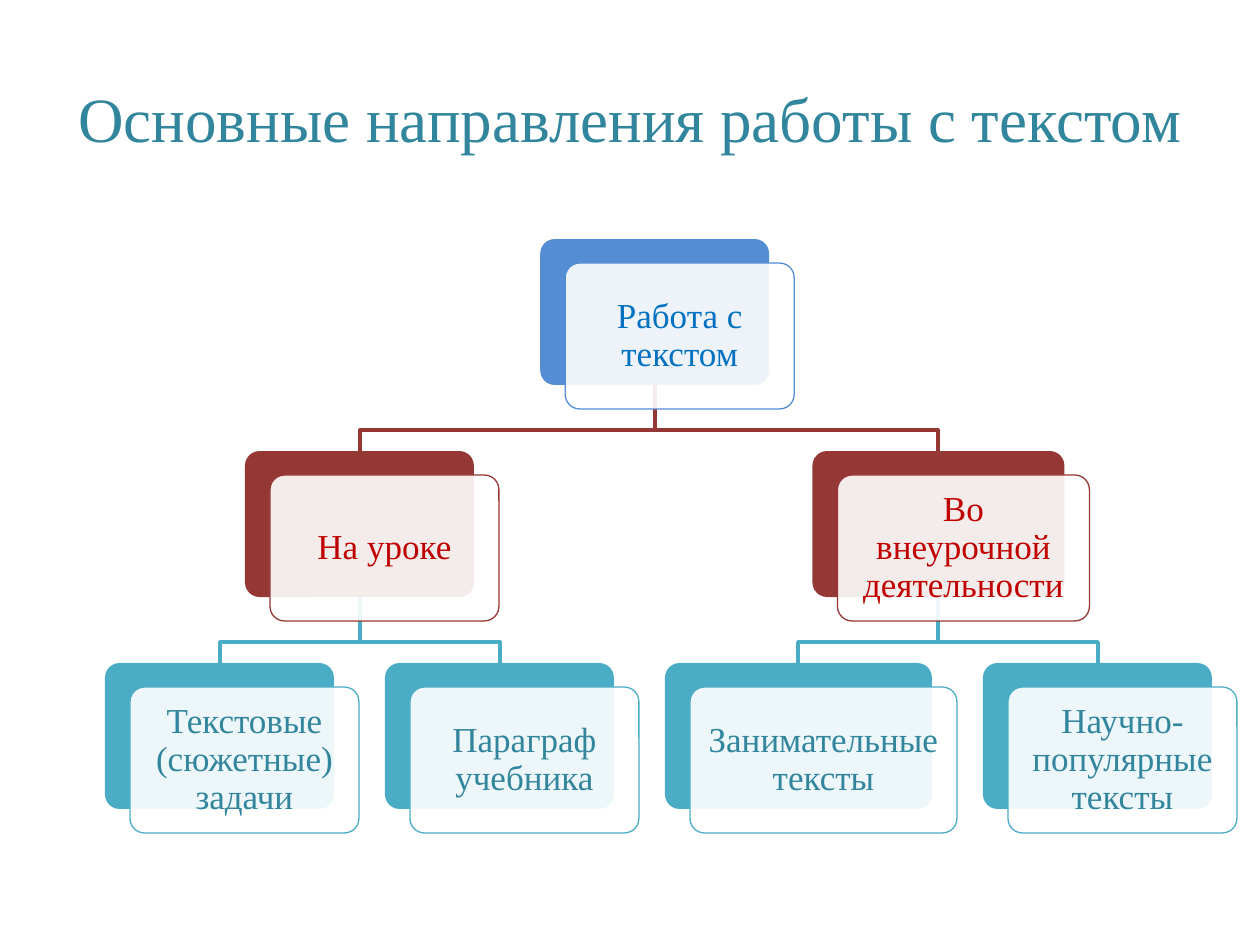
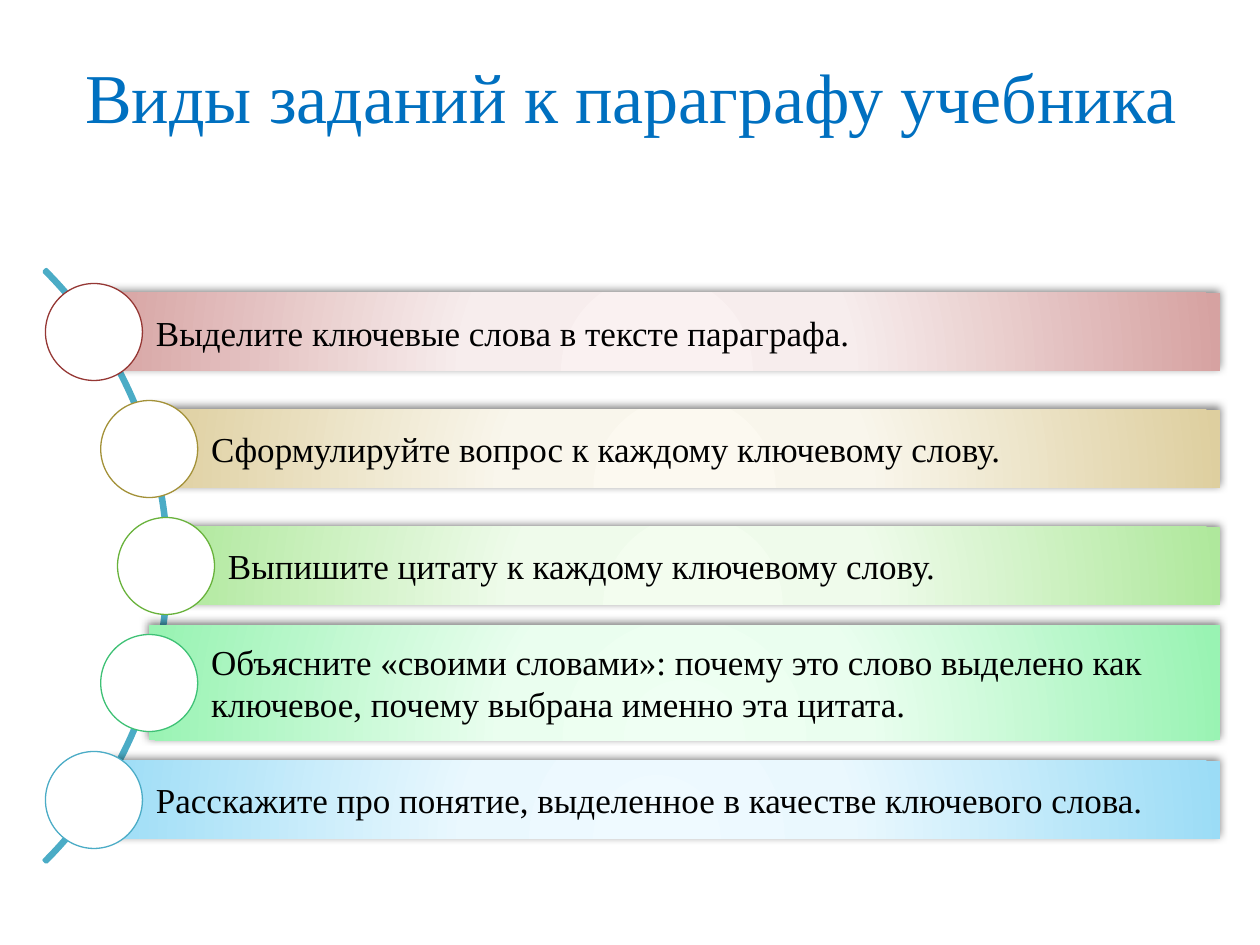
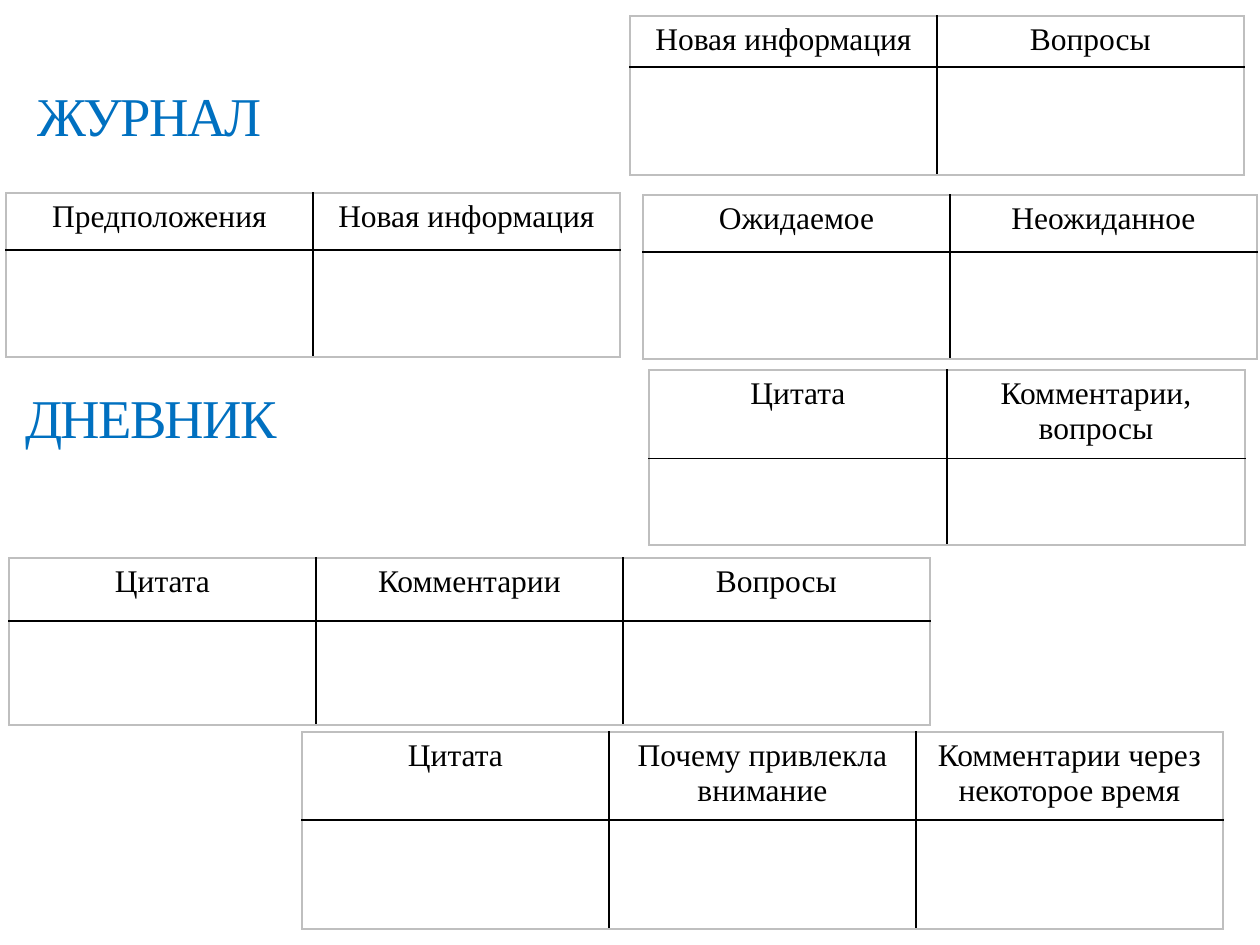
import math

import pptx
import pptx.dml.color
import pptx.enum.shapes
import pptx.enum.text
import pptx.oxml
import pptx.oxml.ns
import pptx.util

PX = 914400 / 126
FONT = "Times New Roman"
BLUE, TEAL, CYAN, RED, MAROON = "0070C0", "31859C", "4BACC6", "C00000", "953734"
BLACK, WHITE, GREY = "000000", "FFFFFF", "BFBFBF"
SHAPES = pptx.enum.shapes.MSO_SHAPE
CENTER = pptx.enum.text.PP_ALIGN.CENTER
LEFT = pptx.enum.text.PP_ALIGN.LEFT
MIDDLE = pptx.enum.text.MSO_ANCHOR.MIDDLE

TREE = ("Работа с текстом", 229, [
    ("На уроке", 229, [
        ("Текстовые (сюжетные) задачи", 229, []),
        ("Параграф учебника", 229, []),
    ]),
    ("Во внеурочной деятельности", 252, [
        ("Занимательные тексты", 267, []),
        ("Научно-популярные тексты", 229, []),
    ]),
])
LEVEL_COLORS = [("548DD4", BLUE), (MAROON, RED), (CYAN, TEAL)]
TREE_LEFT, TREE_TOP, LEVEL_STEP, LEAF_GAP = 105, 239, 212, 51
NODE_HEIGHT, CARD_RIGHT, CARD_DOWN, ELBOW = 146, 25, 24, 45

TASKS = [
    ("Выделите ключевые слова в тексте параграфа.", 78, MAROON, ("FAF1F1", "F7EDED", "D6A2A1")),
    ("Сформулируйте вопрос к каждому ключевому слову.", 78, "A39138", ("FCF9F0", "F9F6EC", "DECF9F")),
    ("Выпишите цитату к каждому ключевому слову.", 78, "68B23B", ("F3FDEF", "EFFBEB", "AFE89C")),
    ("Объясните «своими словами»: почему это слово выделено как ключевое, почему выбрана именно эта цитата.",
     115, "3EC175", ("EFFFF3", "EAFEEF", "99F3B3")),
    ("Расскажите про понятие, выделенное в качестве ключевого слова.", 78, CYAN, ("EFFAFF", "EAF8FE", "9BDCF6")),
]
ARC_X, ARC_Y, ARC_RADIUS, ARC_WIDTH = -250, 566, 419, 3
TASK_STEP, DOT, BAR_RIGHT = 117, 97, 1220

HEADINGS = [("ЖУРНАЛ", (25, 45, 528, 139)), ("ДНЕВНИК", (13, 363, 420, 108))]
TABLES = [
    ((6, 193), 307, (57, 107), ["Предположения", "Новая информация"]),
    ((643, 195), 307, (57, 107), ["Ожидаемое", "Неожиданное"]),
    ((630, 16), 307, (51, 108), ["Новая информация", "Вопросы"]),
    ((9, 558), 307, (63, 104), ["Цитата", "Комментарии", "Вопросы"]),
    ((649, 370), 298, (85, 87), ["Цитата", "Комментарии, вопросы"]),
    ((302, 732), 307, (88, 109), ["Цитата", "Почему привлекла внимание", "Комментарии через некоторое время"]),
]


def px(length):
    return pptx.util.Emu(round(length * PX))


def rgb(color):
    return pptx.dml.color.RGBColor.from_string(color)


def xml(tag, body):
    return pptx.oxml.parse_xml(f"<a:{tag} {pptx.oxml.ns.nsdecls('a')}{body}</a:{tag}>")


def set_all(target, values):
    for name, value in values.items():
        setattr(target, name, value)


def write(frame, text, size, color, align=CENTER, spacing=None, tracking=None, **frame_format):
    set_all(frame, {"word_wrap": True, "vertical_anchor": MIDDLE, **frame_format})
    para = frame.paragraphs[0]
    set_all(para, {"alignment": align, "line_spacing": spacing})
    span = para.add_run()
    span.text = text
    set_all(span.font, {"name": FONT, "size": pptx.util.Pt(size)})
    span.font.color.rgb = rgb(color)
    if tracking:
        span.font._element.set("spc", str(tracking * 100))


def add_text(page, at, text, size, color, **text_format):
    box = page.shapes.add_textbox(*map(px, at))
    write(box.text_frame, text, size, color, **text_format)


def paint(shape, fill=None, line=None, width=0.75):
    shape.shadow.inherit = False
    if fill:
        shape.fill.solid()
        shape.fill.fore_color.rgb = rgb(fill)
    else:
        shape.fill.background()
    if line:
        shape.line.color.rgb = rgb(line)
        shape.line.width = pptx.util.Pt(width)
    else:
        shape.line.fill.background()


def add_shape(page, kind, at, fill=None, line=None, width=0.75):
    shape = page.shapes.add_shape(kind, *map(px, at))
    paint(shape, fill, line, width)
    return shape


def place_tree(node, left, level=0):
    text, width, children = node
    branches, cursor = [], left
    for child in children:
        branch = place_tree(child, cursor, level + 1)
        branches.append(branch)
        cursor = branch["end"] + LEAF_GAP
    if branches:
        first, last = branches[0], branches[-1]
        left = (first["left"] + last["left"] + last["width"] - width) / 2
    end = max([left + width] + [branch["end"] for branch in branches])
    return {"text": text, "left": left, "top": TREE_TOP + LEVEL_STEP * level, "width": width,
            "middle": left + width / 2, "level": level, "branches": branches, "end": end}


def draw_links(page, node):
    for branch in node["branches"]:
        draw_links(page, branch)
        bottom = node["top"] + NODE_HEIGHT
        path = page.shapes.build_freeform(node["middle"], bottom, scale=PX)
        path.add_line_segments([(node["middle"], bottom + ELBOW), (branch["middle"], bottom + ELBOW),
                                (branch["middle"], branch["top"])], close=False)
        paint(path.convert_to_shape(), line=LEVEL_COLORS[branch["level"]][0], width=2)


def draw_nodes(page, node):
    shade, ink = LEVEL_COLORS[node["level"]]
    left, top, width = node["left"], node["top"], node["width"]
    back = add_shape(page, SHAPES.ROUNDED_RECTANGLE, (left, top, width, NODE_HEIGHT), shade)
    card = add_shape(page, SHAPES.ROUNDED_RECTANGLE,
                     (left + CARD_RIGHT, top + CARD_DOWN, width, NODE_HEIGHT), WHITE, shade)
    for shape in (back, card):
        shape.adjustments[0] = 0.1
    card.fill._xPr.find(".//" + pptx.oxml.ns.qn("a:srgbClr")).append(xml("alpha", ' val="90000">'))
    margins = {f"margin_{side}": px(10) for side in ("left", "right", "top", "bottom")}
    write(card.text_frame, node["text"], 20, ink, spacing=0.9, **margins)
    for branch in node["branches"]:
        draw_nodes(page, branch)


def add_glow(bar, colors):
    stops = "".join(f'<a:gs pos="{place}"><a:srgbClr val="{color}"/></a:gs>'
                    for place, color in zip((0, 34000, 100000), colors))
    gradient = xml("gradFill", f' rotWithShape="1"><a:gsLst>{stops}</a:gsLst><a:path path="circle">'
                   '<a:fillToRect l="50000" t="155000" r="50000" b="-55000"/></a:path>')
    shadow = xml("outerShdw", ' blurRad="63500" dist="25400" dir="14700000" rotWithShape="0">'
                 f'<a:srgbClr val="{BLACK}"><a:alpha val="50000"/></a:srgbClr>')
    properties = bar._element.spPr
    properties.replace(properties.find(pptx.oxml.ns.qn("a:noFill")), gradient)
    properties.find(pptx.oxml.ns.qn("a:effectLst")).append(shadow)


def draw_tasks(page):
    size = 2 * ARC_RADIUS
    arc = add_shape(page, SHAPES.BLOCK_ARC, (ARC_X - ARC_RADIUS, ARC_Y - ARC_RADIUS, size, size),
                    line=CYAN, width=2)
    for index, value in enumerate((189, 27, ARC_WIDTH / size)):
        arc.adjustments[index] = value
    for index, (text, height, outline, colors) in enumerate(TASKS):
        rise = TASK_STEP * (index - len(TASKS) // 2)
        x = ARC_X + math.sqrt((ARC_RADIUS - ARC_WIDTH) ** 2 - rise ** 2)
        y = ARC_Y + rise
        bar = add_shape(page, SHAPES.RECTANGLE, (x, y - height / 2, BAR_RIGHT - x, height))
        add_glow(bar, colors)
        write(bar.text_frame, text, 20, BLACK, align=LEFT, margin_left=px(62),
              margin_right=px(8), margin_top=px(8), margin_bottom=px(8))
        add_shape(page, SHAPES.OVAL, (x - DOT / 2, y - DOT / 2, DOT, DOT), WHITE, outline)


def add_grid(page, corner, column_width, heights, heads):
    count = len(heads)
    frame = page.shapes.add_table(2, count, *map(px, (*corner, column_width * count, sum(heights))))
    table = frame.table
    set_all(table, {"first_row": False, "horz_banding": False})
    for column in table.columns:
        column.width = px(column_width)
    for row, height in enumerate(heights):
        table.rows[row].height = px(height)
        for index, head in enumerate(heads):
            cell = table.cell(row, index)
            outer = {"lnL": index == 0, "lnR": index == count - 1, "lnT": row == 0, "lnB": row == 1}
            for tag, edge in outer.items():
                color = GREY if edge else BLACK
                cell._tc.get_or_add_tcPr().append(xml(
                    tag, f' w="12700"><a:solidFill><a:srgbClr val="{color}"/></a:solidFill>'))
            cell.fill.solid()
            cell.fill.fore_color.rgb = rgb(WHITE)
            if row == 0:
                write(cell.text_frame, head, 18, BLACK, vertical_anchor=pptx.enum.text.MSO_ANCHOR.TOP)


def main():
    deck = pptx.Presentation()
    set_all(deck, {"slide_width": px(1260), "slide_height": px(945)})
    directions, tasks, journals = [deck.slides.add_slide(deck.slide_layouts[6]) for _ in range(3)]

    add_text(directions, (63, 38, 1134, 158), "Основные направления работы с текстом", 36, TEAL)
    tree = place_tree(TREE, TREE_LEFT)
    draw_links(directions, tree)
    draw_nodes(directions, tree)

    add_text(tasks, (64, 16, 1134, 158), "Виды заданий к параграфу учебника", 40, BLUE)
    draw_tasks(tasks)

    for text, at in HEADINGS:
        add_text(journals, at, text, 31.2, BLUE, align=LEFT, tracking=-1)
    for grid in TABLES:
        add_grid(journals, *grid)

    deck.save("out.pptx")


if __name__ == "__main__":
    main()
